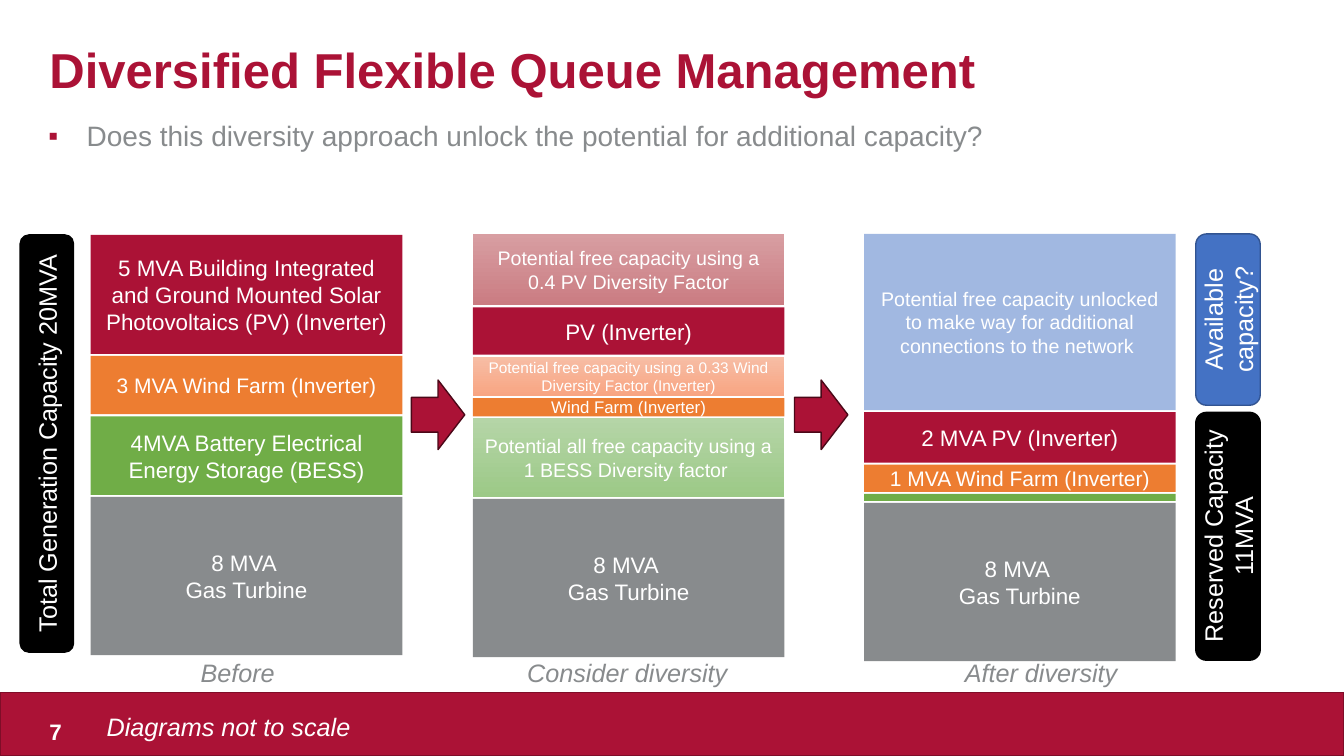
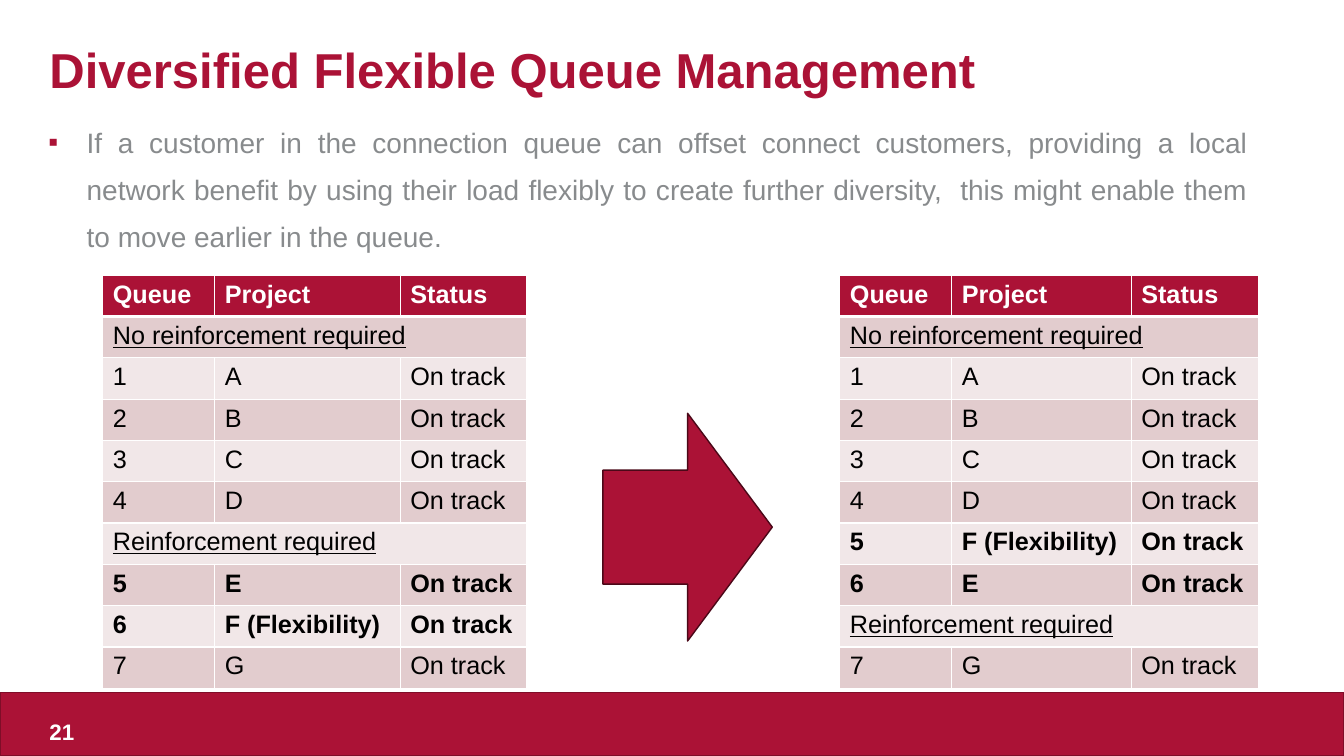
from lxml.etree import SubElement
from pptx import Presentation
from pptx.dml.color import RGBColor
from pptx.enum.shapes import MSO_SHAPE as Shape
from pptx.enum.text import MSO_ANCHOR as Anchor, PP_ALIGN as Align
from pptx.oxml.ns import qn
from pptx.util import Inches, Pt

FONT = "Arial"
RED = RGBColor(0xAB, 0x12, 0x36)
BAND_LINE = RGBColor(0x7F, 0x0D, 0x28)
ARROW_LINE = RGBColor(0x4B, 0x08, 0x18)
GREY = RGBColor(0x88, 0x8B, 0x8D)
GREEN = RGBColor(0x70, 0xAD, 0x47)
ORANGE = RGBColor(0xED, 0x7D, 0x31)
BLUE = RGBColor(0x44, 0x72, 0xC4)
BLUE_LINE = RGBColor(0x32, 0x54, 0x91)
BLACK = RGBColor(0, 0, 0)
WHITE = RGBColor(0xFF, 0xFF, 0xFF)
ROW_DARK = RGBColor(0xE2, 0xCC, 0xCE)
ROW_LIGHT = RGBColor(0xF1, 0xE7, 0xE8)

# Gradients run from top to bottom
FREE_PV = [RGBColor(0xD8, 0x9E, 0xA2), RGBColor(0xCA, 0x7C, 0x82)]
FREE_WIND = [RGBColor(0xF7, 0xBD, 0xA5), RGBColor(0xF8, 0xA5, 0x82)]
FREE_BESS = [RGBColor(0xB5, 0xD5, 0xA7), RGBColor(0x9C, 0xC9, 0x87)]

BLOCK_WIDTH = 3.09
BLOCK_GAP = 0.02
ROW_HEIGHT = 0.41


class Deck:
    """Holds the shared style and the slide being built."""

    def __init__(self):
        self.presentation = Presentation()
        self.presentation.slide_width = Inches(13.33)
        self.presentation.slide_height = Inches(7.5)
        self.slide = None

    def new_slide(self, title, number):
        layout = self.presentation.slide_layouts[6]
        self.slide = self.presentation.slides.add_slide(layout)
        self.shape(Shape.RECTANGLE, 0, 6.87, 13.33, 0.63, RED, BAND_LINE)
        paragraph = self.text(0.49, 0.46, 12.3, 1.39, title, 35, RED,
                              bold=True, inset=False)
        paragraph.line_spacing = 0.9
        self.text(0.49, 7.1, 0.42, 0.31, number, 16, WHITE, bold=True,
                  inset=False, anchor=Anchor.MIDDLE)

    def run(self, paragraph, text, size, color, bold=False, italic=False,
            underline=False):
        run = paragraph.add_run()
        run.text = text
        font = run.font
        font.name, font.size = FONT, Pt(size)
        font.bold, font.italic, font.underline = bold, italic, underline
        font.color.rgb = color

    def text(self, left, top, width, height, text, size, color, bold=False,
             italic=False, inset=True, anchor=Anchor.TOP):
        box = self.slide.shapes.add_textbox(
            Inches(left), Inches(top), Inches(width), Inches(height))
        frame = box.text_frame
        frame.word_wrap = True
        frame.vertical_anchor = anchor
        if not inset:
            frame.margin_left = frame.margin_right = 0
            frame.margin_top = frame.margin_bottom = 0
        paragraph = frame.paragraphs[0]
        self.run(paragraph, text, size, color, bold, italic)
        return paragraph

    def bullet(self, text, spacing, align=Align.LEFT):
        paragraph = self.text(0.48, 1.11, 11.9, 1.01, text, 20, GREY,
                              inset=False)
        properties = paragraph._p.get_or_add_pPr()
        properties.set("marL", str(Inches(0.38)))
        properties.set("indent", str(-Inches(0.38)))
        color = SubElement(properties, qn("a:buClr"))
        SubElement(color, qn("a:srgbClr"), val=str(RED))
        SubElement(properties, qn("a:buFont"), typeface=FONT)
        SubElement(properties, qn("a:buChar"), char="▪")
        paragraph.line_spacing = spacing
        paragraph.alignment = align

    def shape(self, kind, left, top, width, height, fill, line=None,
              lines=(), size=16, alpha=None):
        shape = self.slide.shapes.add_shape(
            kind, Inches(left), Inches(top), Inches(width), Inches(height))
        shape.shadow.inherit = False
        if isinstance(fill, list):
            shape.fill.gradient()
            shape.fill.gradient_angle = 270
            for stop, color in zip(shape.fill.gradient_stops, fill):
                stop.color.rgb = color
        else:
            shape.fill.solid()
            shape.fill.fore_color.rgb = fill
        if alpha is not None:
            color = shape._element.spPr.find(qn("a:solidFill"))[0]
            SubElement(color, qn("a:alpha"), val=str(alpha * 1000))
        if line is None:
            shape.line.fill.background()
        else:
            shape.line.color.rgb = line
            shape.line.width = Pt(1)
        frame = shape.text_frame
        frame.word_wrap = True
        frame.vertical_anchor = Anchor.MIDDLE
        for index, text in enumerate(lines):
            paragraph = frame.add_paragraph() if index else frame.paragraphs[0]
            paragraph.alignment = Align.CENTER
            self.run(paragraph, text, size, WHITE)
        return shape

    def arrow(self, left, top, width, height):
        self.shape(Shape.RIGHT_ARROW, left, top, width, height, RED, ARROW_LINE)

    def side_label(self, left, top, width, height, text, fill, line):
        """Label reading upwards; the box given is the one seen after turning."""
        shift = (height - width) / 2
        shape = self.shape(Shape.ROUNDED_RECTANGLE, left - shift, top + shift,
                           height, width, fill, line, [text], 18)
        shape.rotation = 270

    def stack(self, left, top, blocks):
        """Blocks from top to bottom: height, fill, lines, text size, alpha."""
        for height, fill, lines, size, alpha in blocks:
            self.shape(Shape.RECTANGLE, left, top, BLOCK_WIDTH, height, fill,
                       lines=lines, size=size, alpha=alpha)
            top += height + BLOCK_GAP

    def cell(self, cell, text, fill, color=BLACK, bold=False, underline=False,
             bottom=1):
        properties = cell._tc.get_or_add_tcPr()
        for side, width in (("L", 1), ("R", 1), ("T", 1), ("B", bottom)):
            border = SubElement(properties, qn(f"a:ln{side}"),
                                w=str(Pt(width)))
            solid = SubElement(border, qn("a:solidFill"))
            SubElement(solid, qn("a:srgbClr"), val=str(WHITE))
        cell.fill.solid()
        cell.fill.fore_color.rgb = fill
        if text:
            self.run(cell.text_frame.paragraphs[0], text, 18, color, bold,
                     underline=underline)

    def queue_table(self, left, widths, entries, moved):
        """Entries are projects in queue order, with section headings between."""
        count = len(entries) + 1
        table = self.slide.shapes.add_table(
            count, len(widths), Inches(left), Inches(2.73),
            Inches(sum(widths)), Inches(ROW_HEIGHT * count)).table
        table.first_row = table.horz_banding = False
        for column, width in zip(table.columns, widths):
            column.width = Inches(width)
        for row in table.rows:
            row.height = Inches(ROW_HEIGHT)
        for index, text in enumerate(("Queue", "Project", "Status")):
            self.cell(table.cell(0, index), text, RED, WHITE, True, bottom=3)
        position = 0
        for row, entry in enumerate(entries, 1):
            fill = ROW_DARK if row % 2 else ROW_LIGHT
            heading = entry.endswith("required")
            if heading:
                table.cell(row, 0).merge(table.cell(row, len(widths) - 1))
                texts = (entry, "", "")
            else:
                position += 1
                texts = (str(position), entry, "On track")
            for index, text in enumerate(texts):
                self.cell(table.cell(row, index), text, fill,
                          bold=entry in moved, underline=heading)


def capacity_slide(deck):
    deck.new_slide("Diversified Flexible Queue Management", "7")
    deck.bullet("Does this diversity approach unlock the potential for "
                "additional capacity?", 1.2)
    gas = (1.57, GREY, ["8 MVA ", "Gas Turbine"], 16, None)

    # Before
    deck.stack(0.9, 2.33, [
        (1.18, RED, ["5 MVA Building Integrated and Ground Mounted Solar "
                     "Photovoltaics (PV) (Inverter)"], 16, None),
        (0.58, ORANGE, ["3 MVA Wind Farm (Inverter)"], 15, None),
        (0.78, GREEN, ["4MVA Battery Electrical Energy Storage (BESS)"], 16,
         None),
        gas])

    # Consider diversity
    deck.stack(4.69, 2.32, [
        (0.71, FREE_PV, ["Potential free capacity using a 0.4 PV Diversity "
                         "Factor"], 14, None),
        (0.47, RED, ["PV (Inverter)"], 16, None),
        (0.39, FREE_WIND, ["Potential free capacity using a 0.33 Wind "
                           "Diversity Factor (Inverter)"], 11, None),
        (0.18, ORANGE, ["Wind Farm (Inverter)"], 12, None),
        (0.78, FREE_BESS, ["Potential all free capacity using a 1 BESS "
                           "Diversity factor "], 14, None),
        gas])

    # After diversity
    deck.stack(8.57, 2.32, [
        (1.75, BLUE, ["Potential free capacity unlocked to make way for "
                      "additional connections to the network "], 14, 50),
        (0.5, RED, ["2 MVA PV (Inverter)"], 16, None),
        (0.27, ORANGE, ["1 MVA Wind Farm (Inverter)"], 15, None),
        (0.07, GREEN, [], 16, None),
        gas])

    # Arrows, captions and side labels
    for left in (4.08, 7.88):
        deck.arrow(left, 3.77, 0.53, 0.69)
    for left, width, caption in ((1.89, 1.48, "Before"),
                                 (5.13, 2.66, "Consider diversity"),
                                 (9.47, 3.09, "After diversity")):
        deck.text(left, 6.47, width, 0.4, caption, 18, GREY, italic=True)
    deck.side_label(0.2, 2.33, 0.53, 4.14, "Total Generation Capacity 20MVA",
                    BLACK, BLACK)
    deck.side_label(11.86, 2.32, 0.64, 1.7, "Available capacity?", BLUE,
                    BLUE_LINE)
    deck.side_label(11.86, 4.09, 0.64, 2.46, "Reserved Capacity 11MVA",
                    BLACK, BLACK)
    deck.text(0.96, 7.01, 4.2, 0.4, "Diagrams not to scale", 18, WHITE,
              italic=True)


def queue_slide(deck):
    deck.new_slide("Diversified Flexible Queue Management", "21")
    deck.bullet("If a customer in the connection queue can offset connect "
                "customers, providing a local network benefit by using their "
                "load flexibly to create further diversity,  this might "
                "enable them to move earlier in the queue.", 1.4,
                Align.JUSTIFY)

    # Queue before and after the flexible project moves up
    flexible = "F (Flexibility)"
    start = ["No reinforcement required", "A", "B", "C", "D"]
    reinforcement = "Reinforcement required"
    moved = ("E", flexible)
    deck.queue_table(1.02, (1.11, 1.84, 1.25),
                     start + [reinforcement, "E", flexible, "G"], moved)
    deck.queue_table(8.33, (1.11, 1.78, 1.26),
                     start + [flexible, "E", reinforcement, "G"], moved)
    deck.arrow(5.98, 4.1, 1.68, 2.26)


def main():
    deck = Deck()
    capacity_slide(deck)
    queue_slide(deck)
    deck.presentation.save("out.pptx")


if __name__ == "__main__":
    main()
